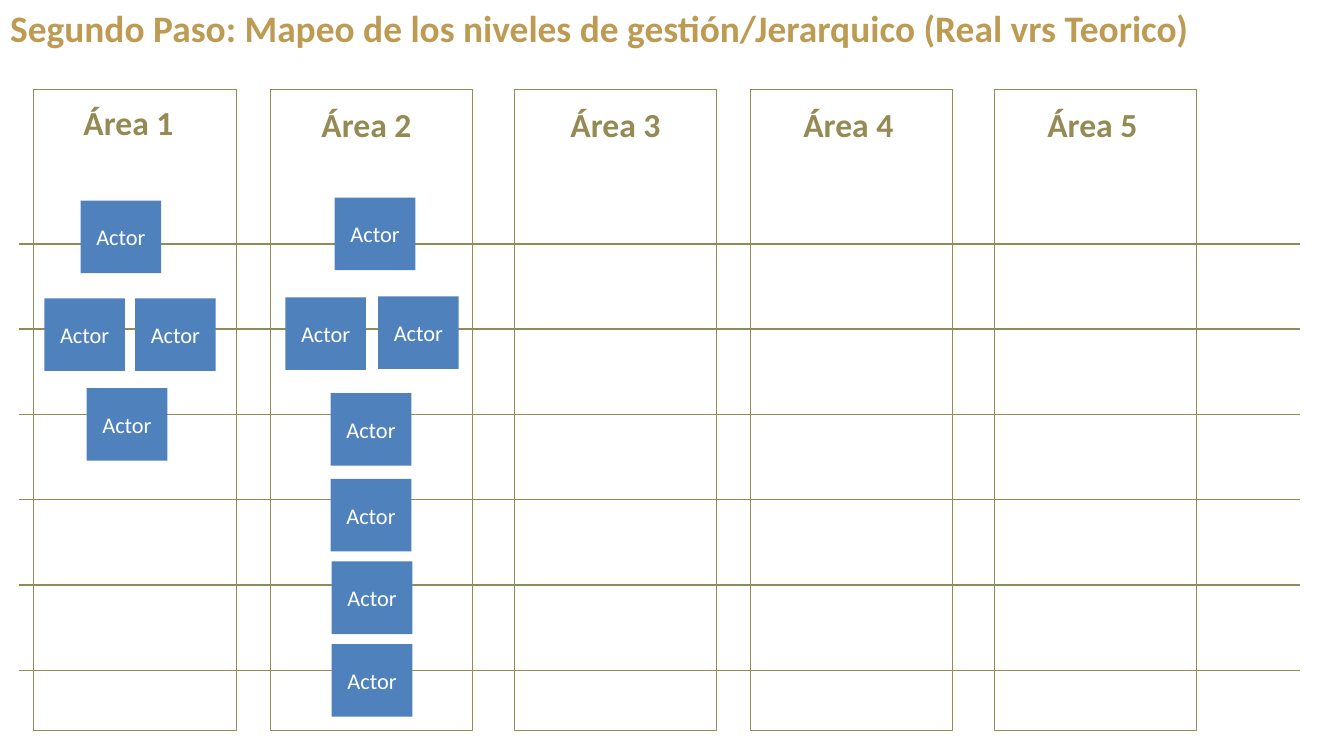
from lxml.etree import SubElement
from pptx import Presentation
from pptx.dml.color import RGBColor
from pptx.enum.shapes import MSO_CONNECTOR, MSO_SHAPE
from pptx.enum.text import MSO_ANCHOR, MSO_AUTO_SIZE, PP_ALIGN
from pptx.oxml.ns import qn
from pptx.util import Inches, Pt

GOLD = RGBColor(0xBD, 0x9B, 0x53)
OLIVE = RGBColor(0x94, 0x8A, 0x54)
BLUE = RGBColor(0x4F, 0x81, 0xBD)
WHITE = RGBColor(0xFF, 0xFF, 0xFF)

AREA_TOP, AREA_WIDTH, AREA_HEIGHT = 0.89, 2.01, 6.36
AREAS = [(0.33, 0.73, 0.96), (2.68, 3.09, 0.98), (5.1, 5.56, 0.98),
         (7.44, 7.87, 0.98), (9.86, 10.29, 0.98)]
LEVEL_LEFT, LEVEL_RIGHT = 0.19, 12.89
LEVEL_TOP, LEVEL_GAP, LEVEL_COUNT = 2.42, 0.846, 6
ACTOR_WIDTH, ACTOR_HEIGHT = 0.8, 0.72
ACTORS = [(0.8, 1.99), (0.44, 2.96), (1.34, 2.96), (0.86, 3.85),
          (3.32, 1.96), (2.83, 2.95), (3.75, 2.94), (3.28, 3.9),
          (3.28, 4.75), (3.29, 5.57), (3.29, 6.39)]


def add_rectangle(left, top, width, height):
    shape = slide.shapes.add_shape(MSO_SHAPE.RECTANGLE, Inches(left), Inches(top),
                                   Inches(width), Inches(height))
    shape.shadow.inherit = False
    return shape


def write_text(shape, text, size, color, alignment, bold):
    paragraph = shape.text_frame.paragraphs[0]
    paragraph.text = text
    paragraph.alignment = alignment
    paragraph.font.name = "Calibri"
    paragraph.font.size = Pt(size)
    paragraph.font.bold = bold
    paragraph.font.color.rgb = color


presentation = Presentation()
presentation.slide_width = Inches(13.33)
presentation.slide_height = Inches(7.5)
slide = presentation.slides.add_slide(presentation.slide_layouts[5])

title = slide.shapes.title
title.left, title.top = Inches(0), Inches(0)
title.width, title.height = Inches(13.22), Inches(0.55)
title.text_frame.auto_size = MSO_AUTO_SIZE.NONE
title.text_frame.vertical_anchor = MSO_ANCHOR.TOP
write_text(title, "Segundo Paso: Mapeo de los niveles de gestión/Jerarquico (Real vrs Teorico)",
           26.7, GOLD, PP_ALIGN.JUSTIFY, True)

for area_left, label_left, label_top in AREAS:
    area = add_rectangle(area_left, AREA_TOP, AREA_WIDTH, AREA_HEIGHT)
    area.fill.background()
    area.line.color.rgb = OLIVE
    area.line.width = Pt(0.5)

for level in range(LEVEL_COUNT):
    level_y = Inches(LEVEL_TOP + level * LEVEL_GAP)
    level_line = slide.shapes.add_connector(MSO_CONNECTOR.STRAIGHT, Inches(LEVEL_LEFT), level_y,
                                            Inches(LEVEL_RIGHT), level_y)
    level_line.line.color.rgb = OLIVE
    level_line.line.width = Pt(1)
    SubElement(level_line.element.spPr, qn("a:effectLst"))

for number, (area_left, label_left, label_top) in enumerate(AREAS, start=1):
    label = slide.shapes.add_textbox(Inches(label_left), Inches(label_top), Inches(1.1), Inches(0.5))
    label.text_frame.word_wrap = False
    label.text_frame.auto_size = MSO_AUTO_SIZE.SHAPE_TO_FIT_TEXT
    write_text(label, f"Área {number}", 24, OLIVE, PP_ALIGN.LEFT, True)

for actor_left, actor_top in ACTORS:
    actor = add_rectangle(actor_left, actor_top, ACTOR_WIDTH, ACTOR_HEIGHT)
    actor.fill.solid()
    actor.fill.fore_color.rgb = BLUE
    actor.line.fill.background()
    actor.text_frame.vertical_anchor = MSO_ANCHOR.MIDDLE
    write_text(actor, "Actor", 16, WHITE, PP_ALIGN.CENTER, False)

presentation.save("out.pptx")
